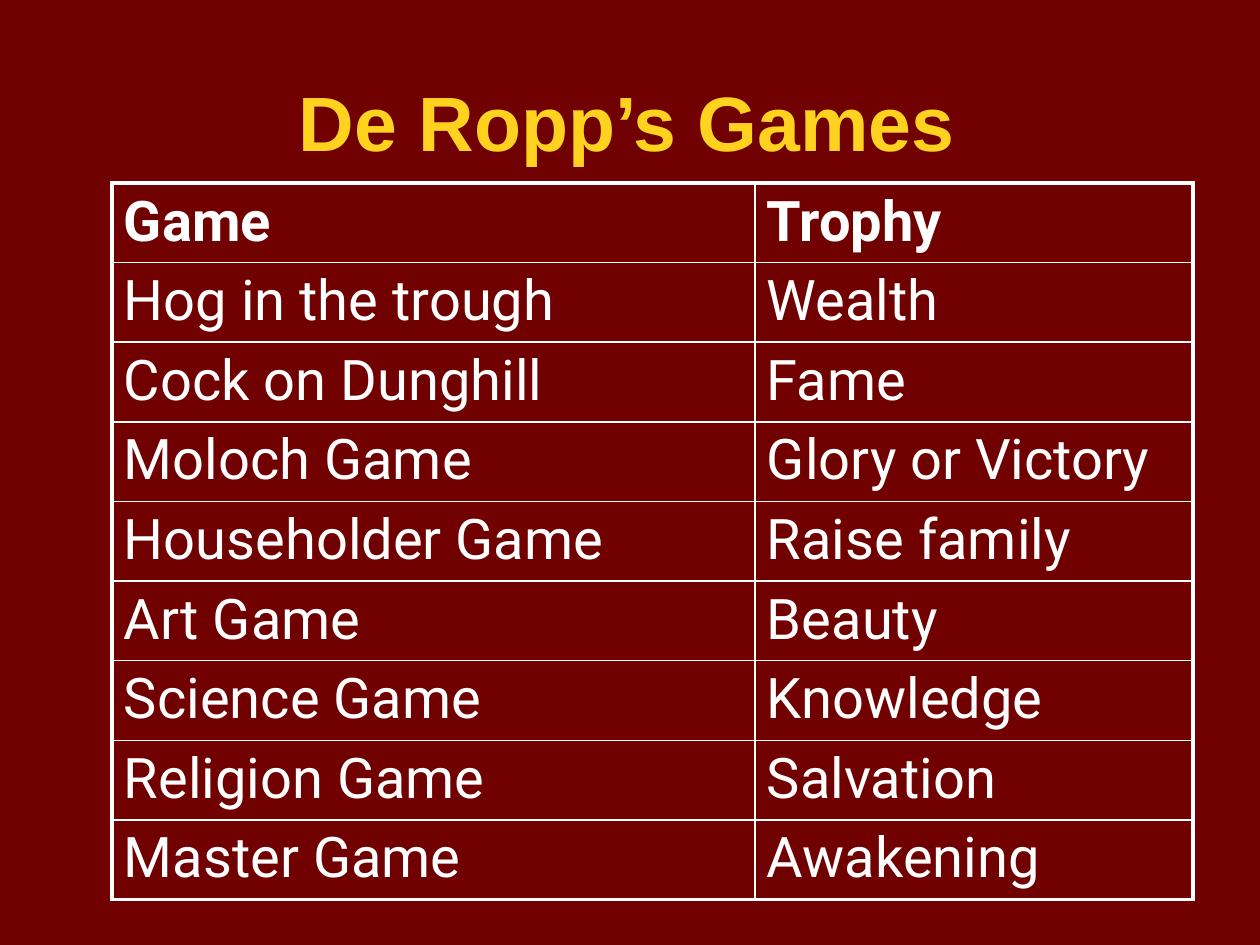
"""Build the slide that lists De Ropp's games and their trophies."""
from lxml.etree import SubElement
from pptx import Presentation
from pptx.dml.color import RGBColor
from pptx.oxml.ns import qn
from pptx.util import Pt

PX = 914400 / 126
WHITE = "FFFFFF"
ROWS = [
    ("Game", "Trophy"),
    ("Hog in the trough", "Wealth"),
    ("Cock on Dunghill", "Fame"),
    ("Moloch Game", "Glory or Victory"),
    ("Householder Game", "Raise family"),
    ("Art Game", "Beauty"),
    ("Science Game", "Knowledge"),
    ("Religion Game", "Salvation"),
    ("Master Game", "Awakening"),
]
COL_WIDTHS = [643, 438]
TABLE_HEIGHT = 717


def px(n):
    return round(n * PX)


def style(p, name, size, color, bold):
    p.font.name = name
    p.font.size = Pt(size)
    p.font.bold = bold
    p.font.color.rgb = RGBColor.from_string(color)


prs = Presentation()
prs.slide_width, prs.slide_height = px(1260), px(945)
s = prs.slides.add_slide(prs.slide_layouts[6])
s.background.fill.solid()
s.background.fill.fore_color.rgb = RGBColor.from_string("710000")

tf = s.shapes.add_textbox(px(299), px(64), px(663), px(96)).text_frame
tf.word_wrap = True
tf.margin_left = tf.margin_right = tf.margin_bottom = 0
tf.margin_top = px(10)
p = tf.paragraphs[0]
p.text = "De Ropp’s Games"
style(p, "Arial", 44, "FFD21F", True)

table = s.shapes.add_table(len(ROWS), len(COL_WIDTHS), px(112), px(183),
                           px(sum(COL_WIDTHS)), px(TABLE_HEIGHT)).table
table.first_row = table.horz_banding = False
for col, width in zip(table.columns, COL_WIDTHS):
    col.width = px(width)

for i, row in enumerate(ROWS):
    table.rows[i].height = px(TABLE_HEIGHT / len(ROWS))
    for j, text in enumerate(row):
        cell = table.cell(i, j)
        cell.margin_left, cell.margin_top = px(12), px(6)
        cell.margin_right = cell.margin_bottom = 0
        p = cell.text_frame.paragraphs[0]
        p.text = text
        style(p, "Roboto", 32, WHITE, i == 0)

        tcPr = cell._tc.get_or_add_tcPr()
        outer = {"lnL": j == 0, "lnR": j == len(row) - 1,
                 "lnT": i == 0, "lnB": i == len(ROWS) - 1}
        for tag, is_outer in outer.items():
            ln = SubElement(tcPr, qn(f"a:{tag}"), w=str(Pt(2.25 if is_outer else 1)))
            SubElement(SubElement(ln, qn("a:solidFill")), qn("a:srgbClr"), val=WHITE)
        cell.fill.background()

prs.save("out.pptx")
